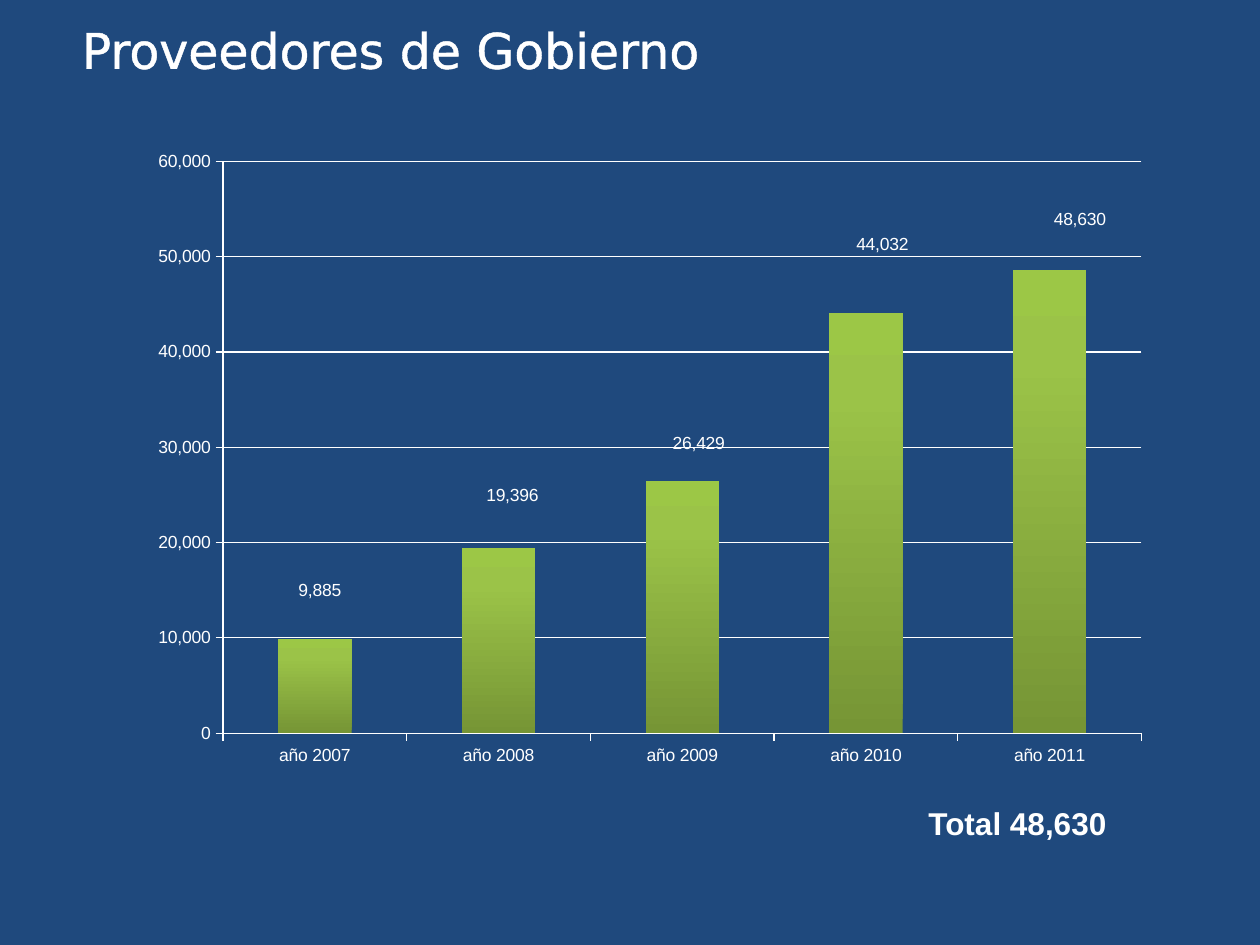
from copy import deepcopy
from dataclasses import dataclass

from lxml import etree
from pptx import Presentation
from pptx.chart.data import CategoryChartData
from pptx.dml.color import RGBColor
from pptx.enum.chart import XL_CHART_TYPE, XL_TICK_MARK
from pptx.enum.text import MSO_ANCHOR
from pptx.oxml import parse_xml
from pptx.oxml.ns import nsdecls, qn
from pptx.util import Inches, Pt

STACKED = XL_CHART_TYPE.COLUMN_STACKED
TICK_OUT = XL_TICK_MARK.OUTSIDE
TOP, MIDDLE = MSO_ANCHOR.TOP, MSO_ANCHOR.MIDDLE
NUMBER_FORMAT = "#,##0"
NO_LEADER_LINES = (
    f"<c:extLst {nsdecls('c')}>"
    '<c:ext uri="{CE6537A1-D6FC-4f65-9D91-7224C49458BB}" '
    'xmlns:c15="http://schemas.microsoft.com/office/drawing/2012/chart">'
    '<c15:showLeaderLines val="0"/></c:ext></c:extLst>')


@dataclass(frozen=True)
class Theme:
    background: RGBColor = RGBColor(0x1F, 0x49, 0x7D)
    text: RGBColor = RGBColor(0xFF, 0xFF, 0xFF)
    # Bar gradient: position and colour, from bottom to top
    bar_stops: tuple = ((0, "769535"), (0.8, "9BC348"), (1, "9CC746"))
    title_font: str = "DejaVu Sans"
    body_font: str = "Arial"
    title_size: int = 28
    total_size: int = 18
    chart_size: int = 10
    title_outline: float = 1.45
    line_width: float = 0.75


def manual_layout(x, y, width=None, height=None):
    """Return a chart layout; with a size it places the inner plot area."""
    parts = {"x": x, "y": y}
    if width is not None:
        parts = {"layoutTarget": "inner", "xMode": "edge", "yMode": "edge",
                 **parts, "w": width, "h": height}
    body = "".join(f'<c:{name} val="{value}"/>' for name, value in parts.items())
    return parse_xml(f"<c:layout {nsdecls('c')}><c:manualLayout>{body}"
                     "</c:manualLayout></c:layout>")


class SlideBuilder:
    def __init__(self, slide, theme):
        self.slide = slide
        self.theme = theme
        slide.background.fill.solid()
        slide.background.fill.fore_color.rgb = theme.background

    def style_font(self, font, name, size, bold=False):
        font.name, font.size, font.bold = name, Pt(size), bold
        font.color.rgb = self.theme.text

    def text(self, box, words, name, size, bold=False, anchor=TOP, outline=None):
        shape = self.slide.shapes.add_textbox(*map(Inches, box))
        frame = shape.text_frame
        frame.word_wrap = True
        frame.vertical_anchor = anchor
        run = frame.paragraphs[0].add_run()
        run.text = words
        self.style_font(run.font, name, size, bold)
        if outline:
            properties = run.font._element
            line = etree.Element(qn("a:ln"), w=str(Pt(outline)))
            fill = etree.SubElement(line, qn("a:solidFill"))
            etree.SubElement(fill, qn("a:srgbClr"), val=str(self.theme.text))
            properties.insert(0, line)

    def line(self, line_format):
        line_format.color.rgb = self.theme.text
        line_format.width = Pt(self.theme.line_width)

    def column_chart(self, box, plot_box, categories, values, label_offsets):
        data = CategoryChartData(number_format=NUMBER_FORMAT)
        data.categories = categories
        data.add_series("Series 1", values)
        chart = self.slide.shapes.add_chart(
            STACKED, *map(Inches, box), data).chart
        chart.has_legend = False
        chart.has_title = False
        self.style_font(chart.font, self.theme.body_font, self.theme.chart_size)

        # Plot area inside the chart, as fractions of its size
        left, top, width, height = box
        plot_left, plot_top, plot_width, plot_height = plot_box
        plot_area = chart._chartSpace.chart.plotArea
        for old_layout in plot_area.findall(qn("c:layout")):
            plot_area.remove(old_layout)
        plot_area.insert(0, manual_layout(
            (plot_left - left) / width, (plot_top - top) / height,
            plot_width / width, plot_height / height))

        # Axes
        for axis in (chart.category_axis, chart.value_axis):
            axis.major_tick_mark = TICK_OUT
            self.line(axis.format.line)
        value_axis = chart.value_axis
        value_axis.minimum_scale, value_axis.maximum_scale = 0, 60000
        value_axis.major_unit = 10000
        value_axis.tick_labels.number_format = NUMBER_FORMAT
        value_axis.tick_labels.number_format_is_linked = False
        value_axis.has_major_gridlines = True
        self.line(value_axis.major_gridlines.format.line)

        # Bars
        plot = chart.plots[0]
        plot.gap_width, plot.overlap = 150, 100
        plot.vary_by_categories = False
        series = plot.series[0]
        self.gradient(series.format.fill)
        self.value_labels(series, label_offsets, width, height)

    def value_labels(self, series, offsets, width, height):
        """Show values, moved right and up from the bar centres."""
        labels = series.data_labels
        labels.show_value = True
        labels.number_format = NUMBER_FORMAT
        labels.number_format_is_linked = False
        for index in range(len(offsets)):
            self.style_font(series.points[index].data_label.font,
                            self.theme.body_font, self.theme.chart_size)
        group = series._element.find(qn("c:dLbls"))
        for label, (right, up) in zip(group.findall(qn("c:dLbl")), offsets):
            label.insert(1, manual_layout(right / width, -up / height))

        # No leader lines between bars and moved labels
        for leader_lines in group.findall(qn("c:showLeaderLines")):
            leader_lines.set("val", "0")
        group.append(parse_xml(NO_LEADER_LINES))

    def gradient(self, fill):
        fill.gradient()
        fill.gradient_angle = 90
        stop_list = fill._xPr.find(".//" + qn("a:gsLst"))
        stop_list.insert(1, deepcopy(stop_list[0]))
        for stop, (position, color) in zip(fill.gradient_stops, self.theme.bar_stops):
            stop.position = position
            stop.color.rgb = RGBColor.from_string(color)


def main():
    presentation = Presentation()
    presentation.slide_width = Inches(10)
    presentation.slide_height = Inches(7.5)
    theme = Theme()
    slide = presentation.slides.add_slide(presentation.slide_layouts[6])
    builder = SlideBuilder(slide, theme)

    # Title
    builder.text((0.55, 0, 8.45, 0.78), "Proveedores de Gobierno",
                 theme.title_font, theme.title_size, anchor=MIDDLE,
                 outline=theme.title_outline)

    # Total
    builder.text((7.27, 6.33, 1.95, 0.4), "Total 48,630",
                 theme.body_font, theme.total_size, bold=True)

    # Suppliers per year
    builder.column_chart(
        box=(1.09, 1.09, 8.13, 5.08),
        plot_box=(1.77, 1.28, 7.29, 4.54),
        categories=[f"año {year}" for year in range(2007, 2012)],
        values=[9885, 19396, 26429, 44032, 48630],
        label_offsets=[(0.04, 0.76), (0.11, 1.15), (0.13, 1.3),
                       (0.13, 2.21), (0.24, 2.24)])

    presentation.save("out.pptx")


if __name__ == "__main__":
    main()
